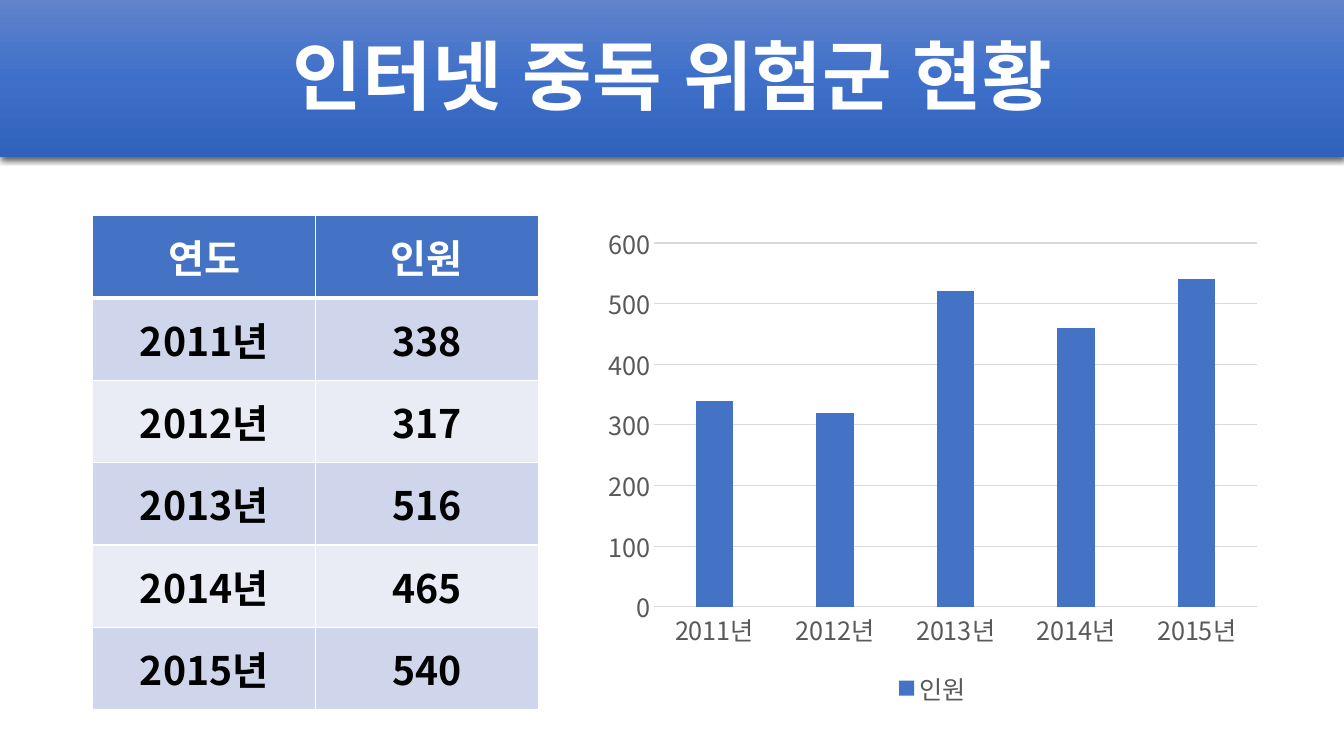
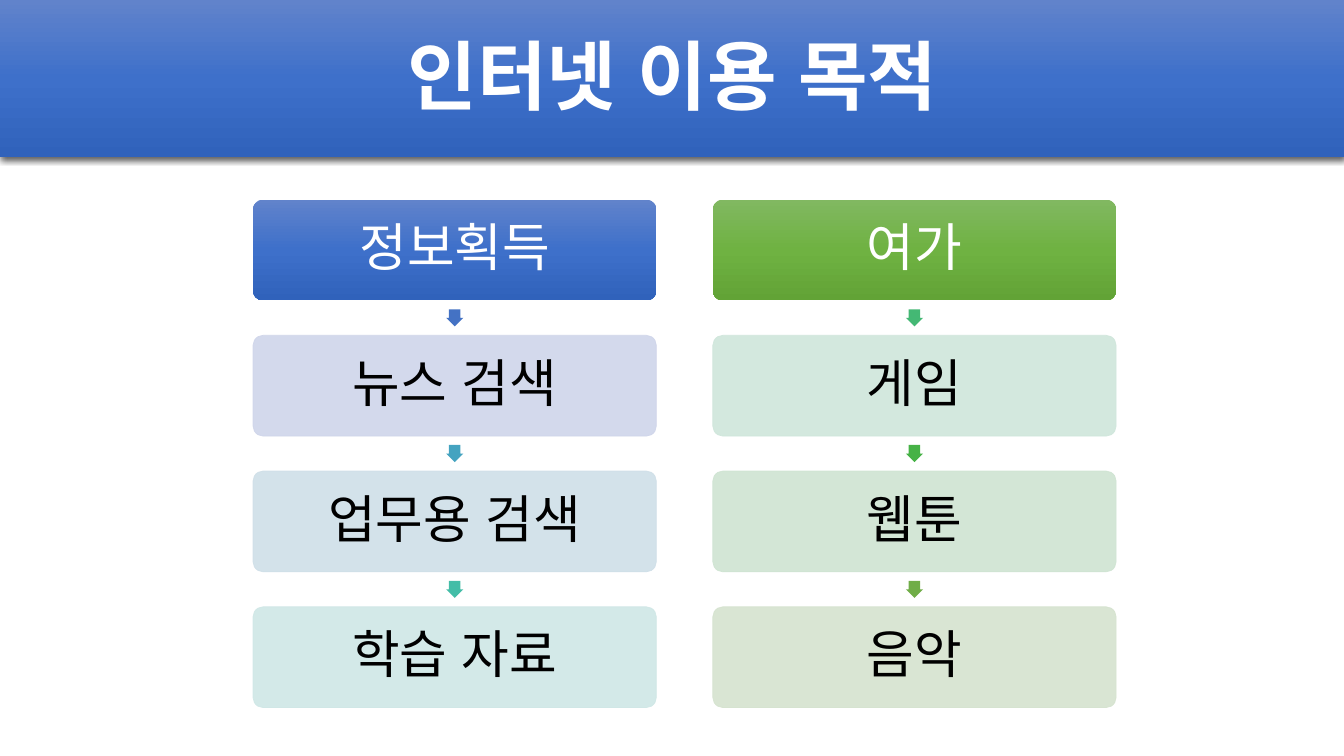
from lxml.etree import SubElement
from pptx import Presentation
from pptx.chart.data import CategoryChartData
from pptx.dml.color import RGBColor
from pptx.enum.chart import XL_CHART_TYPE, XL_LEGEND_POSITION, XL_TICK_MARK
from pptx.enum.lang import MSO_LANGUAGE_ID
from pptx.enum.shapes import MSO_SHAPE
from pptx.enum.text import MSO_ANCHOR, MSO_AUTO_SIZE, PP_ALIGN
from pptx.oxml.ns import qn
from pptx.util import Inches, Pt

FONT = "Noto Sans CJK KR"
WHITE = RGBColor(0xFF, 0xFF, 0xFF)
BLACK = RGBColor(0x00, 0x00, 0x00)
BLUE = RGBColor(0x44, 0x72, 0xC4)
BAND_DARK = RGBColor(0xCF, 0xD5, 0xEA)
BAND_LIGHT = RGBColor(0xE9, 0xEB, 0xF5)
AXIS_TEXT = RGBColor(0x59, 0x59, 0x59)
GRID = RGBColor(0xD9, 0xD9, 0xD9)
BLUE_GRADIENT = (RGBColor(0x61, 0x83, 0xCB), RGBColor(0x3E, 0x70, 0xCA),
                 RGBColor(0x30, 0x62, 0xBB))
GREEN_GRADIENT = (RGBColor(0x81, 0xB8, 0x61), RGBColor(0x6F, 0xB2, 0x42),
                  RGBColor(0x62, 0xA3, 0x36))

SLIDE_WIDTH, SLIDE_HEIGHT = 13.33, 7.5
BAND_HEIGHT = 1.56
TITLE_ONLY = 5

RISK_GROUP = [("2011년", 338), ("2012년", 317), ("2013년", 516),
              ("2014년", 465), ("2015년", 540)]

# Each purpose: heading, heading gradient, then (step, box colour, arrow colour)
PURPOSES = [
    ("정보획득", BLUE_GRADIENT, [
        ("뉴스 검색", BAND_DARK, BLUE),
        ("업무용 검색", RGBColor(0xCF, 0xDF, 0xE8), RGBColor(0x44, 0xA3, 0xC0)),
        ("학습 자료", RGBColor(0xCF, 0xE7, 0xE6), RGBColor(0x43, 0xBD, 0xA7)),
    ]),
    ("여가", GREEN_GRADIENT, [
        ("게임", RGBColor(0xCF, 0xE6, 0xDB), RGBColor(0x44, 0xB8, 0x74)),
        ("웹툰", RGBColor(0xCF, 0xE4, 0xD2), RGBColor(0x46, 0xB2, 0x46)),
        ("음악", RGBColor(0xD5, 0xE3, 0xCF), RGBColor(0x70, 0xAD, 0x47)),
    ]),
]


def write_text(frame, text, size, color=BLACK, bold=False, line_spacing=None):
    """Fill a frame with one centred, vertically centred paragraph."""
    frame.vertical_anchor = MSO_ANCHOR.MIDDLE
    paragraph = frame.paragraphs[0]
    paragraph.alignment = PP_ALIGN.CENTER
    if line_spacing:
        paragraph.line_spacing = line_spacing
    run = paragraph.add_run()
    run.text = text
    style_font(run.font, size, color, bold)
    run.font.language_id = MSO_LANGUAGE_ID.KOREAN
    add_east_asian_font(run.font._element)


def style_font(font, size, color, bold=False):
    font.name = FONT
    font.size = Pt(size)
    font.bold = bold
    font.color.rgb = color


def add_east_asian_font(properties):
    SubElement(properties, qn("a:ea"), typeface=FONT)


def add_box(slide, kind, left, top, width, height):
    box = slide.shapes.add_shape(kind, Inches(left), Inches(top),
                                 Inches(width), Inches(height))
    box.shadow.inherit = False
    box.line.fill.background()
    return box


def fill_gradient(shape, colors):
    """Spread the colours evenly from top to bottom."""
    shape.fill.gradient()
    shape.fill.gradient_angle = 270
    stops = shape.element.spPr.find(".//" + qn("a:gsLst"))
    stops.clear()
    for index, color in enumerate(colors):
        position = 100000 * index // (len(colors) - 1)
        stop = SubElement(stops, qn("a:gs"), pos=str(position))
        SubElement(stop, qn("a:srgbClr"), val=str(color))


def fill_translucent(shape, color, opacity):
    """Give fill and outline one colour with the same opacity in percent."""
    shape.fill.solid()
    shape.fill.fore_color.rgb = color
    shape.line.color.rgb = color
    shape.line.width = Pt(0.5)
    for color_node in shape.element.spPr.iter(qn("a:srgbClr")):
        SubElement(color_node, qn("a:alpha"), val=str(opacity * 1000))


def add_title_band(layout, slide):
    """Build the shaded band, then hand it to the layout all slides share."""
    band = add_box(slide, MSO_SHAPE.RECTANGLE, 0, 0, SLIDE_WIDTH, BAND_HEIGHT)
    fill_gradient(band, BLUE_GRADIENT)
    effects = band.element.spPr.find(qn("a:effectLst"))
    shadow = SubElement(effects, qn("a:outerShdw"), blurRad=str(Pt(4.5)),
                        dist=str(Pt(1.5)), dir="5400000", algn="ctr",
                        rotWithShape="0")
    shade = SubElement(shadow, qn("a:srgbClr"), val=str(BLACK))
    SubElement(shade, qn("a:alpha"), val="63000")
    band.element.find(".//" + qn("p:cNvPr")).set("id", "20")
    layout.shapes.element.insert(2, band.element)


def place_layout_title(layout):
    for holder in layout.placeholders:
        if holder.placeholder_format.idx == 0:
            holder.left, holder.top = Inches(0.92), Inches(0.07)
            holder.width, holder.height = Inches(11.5), Inches(1.45)


def add_titled_slide(deck, layout, title):
    slide = deck.slides.add_slide(layout)
    frame = slide.shapes.title.text_frame
    frame.auto_size = MSO_AUTO_SIZE.NONE
    write_text(frame, title, size=54, color=WHITE, bold=True, line_spacing=0.9)
    return slide


def set_borders(cell, top=1, bottom=1):
    properties = cell._tc.get_or_add_tcPr()
    for side, width in (("L", 1), ("R", 1), ("T", top), ("B", bottom)):
        line = SubElement(properties, qn("a:ln" + side), w=str(Pt(width)))
        fill = SubElement(line, qn("a:solidFill"))
        SubElement(fill, qn("a:srgbClr"), val=str(WHITE))


def add_risk_table(slide, left, top, width, height):
    rows = [("연도", "인원")] + RISK_GROUP
    table = slide.shapes.add_table(len(rows), 2, Inches(left), Inches(top),
                                   Inches(width), Inches(height)).table
    for row_index, row in enumerate(rows):
        is_header = row_index == 0
        band = BAND_DARK if row_index % 2 else BAND_LIGHT
        for column_index, value in enumerate(row):
            cell = table.cell(row_index, column_index)
            set_borders(cell, top=3 if row_index == 1 else 1,
                        bottom=3 if is_header else 1)
            cell.fill.solid()
            cell.fill.fore_color.rgb = BLUE if is_header else band
            write_text(cell.text_frame, str(value), size=28, bold=True,
                       color=WHITE if is_header else BLACK)
            cell.vertical_anchor = MSO_ANCHOR.MIDDLE


def add_risk_chart(slide, left, top, width, height):
    years, counts = zip(*RISK_GROUP)
    data = CategoryChartData()
    data.categories = years
    data.add_series("인원", [round(count, -1) for count in counts])
    chart = slide.shapes.add_chart(
        XL_CHART_TYPE.COLUMN_CLUSTERED, Inches(left), Inches(top),
        Inches(width), Inches(height), data).chart
    style_font(chart.font, 18, BLACK)
    chart.has_title = False

    # Columns
    plot = chart.plots[0]
    plot.vary_by_categories = False
    plot.gap_width, plot.overlap = 219, -27
    columns = plot.series[0]
    columns.invert_if_negative = False
    columns.format.fill.solid()
    columns.format.fill.fore_color.rgb = BLUE

    # Axes
    years_axis, counts_axis = chart.category_axis, chart.value_axis
    for axis in (years_axis, counts_axis):
        axis.major_tick_mark = axis.minor_tick_mark = XL_TICK_MARK.NONE
        style_font(axis.tick_labels.font, 18, AXIS_TEXT)
    counts_axis.minimum_scale, counts_axis.maximum_scale = 0, 600
    counts_axis.major_unit = 100
    counts_axis.format.line.fill.background()
    for line in (years_axis.format.line,
                 counts_axis.major_gridlines.format.line):
        line.color.rgb = GRID
        line.width = Pt(0.75)

    # Legend
    chart.has_legend = True
    chart.legend.position = XL_LEGEND_POSITION.BOTTOM
    chart.legend.include_in_layout = False
    style_font(chart.legend.font, 18, AXIS_TEXT)
    for properties in chart.element.iter(qn("a:defRPr")):
        add_east_asian_font(properties)


def add_purpose_box(slide, text, color, left, top, width, height):
    box = add_box(slide, MSO_SHAPE.ROUNDED_RECTANGLE, left, top, width, height)
    box.adjustments[0] = 0.1
    frame = box.text_frame
    frame.word_wrap = True
    frame.margin_left = frame.margin_right = Inches(0.05)
    frame.margin_top = frame.margin_bottom = Inches(0.05)
    write_text(frame, text, size=37, color=color, line_spacing=0.9)
    return box


def add_purpose_column(slide, purpose, left, top, width, height):
    """Stack a heading and its steps, with an arrow centred in each gap."""
    heading, gradient, steps = purpose
    box_height, arrow_size = 1, 0.17
    pitch = (height - box_height) / len(steps)
    gap = pitch - box_height
    heading_box = add_purpose_box(slide, heading, WHITE, left, top,
                                  width, box_height)
    fill_gradient(heading_box, gradient)
    for index, (step, box_color, arrow_color) in enumerate(steps, start=1):
        box_top = top + index * pitch
        arrow = add_box(slide, MSO_SHAPE.DOWN_ARROW,
                        left + (width - arrow_size) / 2,
                        box_top - (gap + arrow_size) / 2,
                        arrow_size, arrow_size)
        arrow.adjustments[0], arrow.adjustments[1] = 0.67, 0.5
        arrow.fill.solid()
        arrow.fill.fore_color.rgb = arrow_color
        step_box = add_purpose_box(slide, step, BLACK, left, box_top,
                                   width, box_height)
        fill_translucent(step_box, box_color, opacity=90)


def main():
    deck = Presentation()
    deck.slide_width = Inches(SLIDE_WIDTH)
    deck.slide_height = Inches(SLIDE_HEIGHT)
    layout = deck.slide_layouts[TITLE_ONLY]
    place_layout_title(layout)

    # Number of people at risk
    risk_slide = add_titled_slide(deck, layout, "인터넷 중독 위험군 현황")
    add_title_band(layout, risk_slide)
    add_risk_table(risk_slide, 0.92, 2.14, 4.42, 4.9)
    add_risk_chart(risk_slide, 5.9, 2.13, 6.7, 4.93)

    # Purposes of use
    purpose_slide = add_titled_slide(deck, layout, "인터넷 이용 목적")
    for index, purpose in enumerate(PURPOSES):
        add_purpose_column(purpose_slide, purpose, 2.51 + index * 4.56, 1.98,
                           4, 5.04)

    deck.save("out.pptx")


if __name__ == "__main__":
    main()
